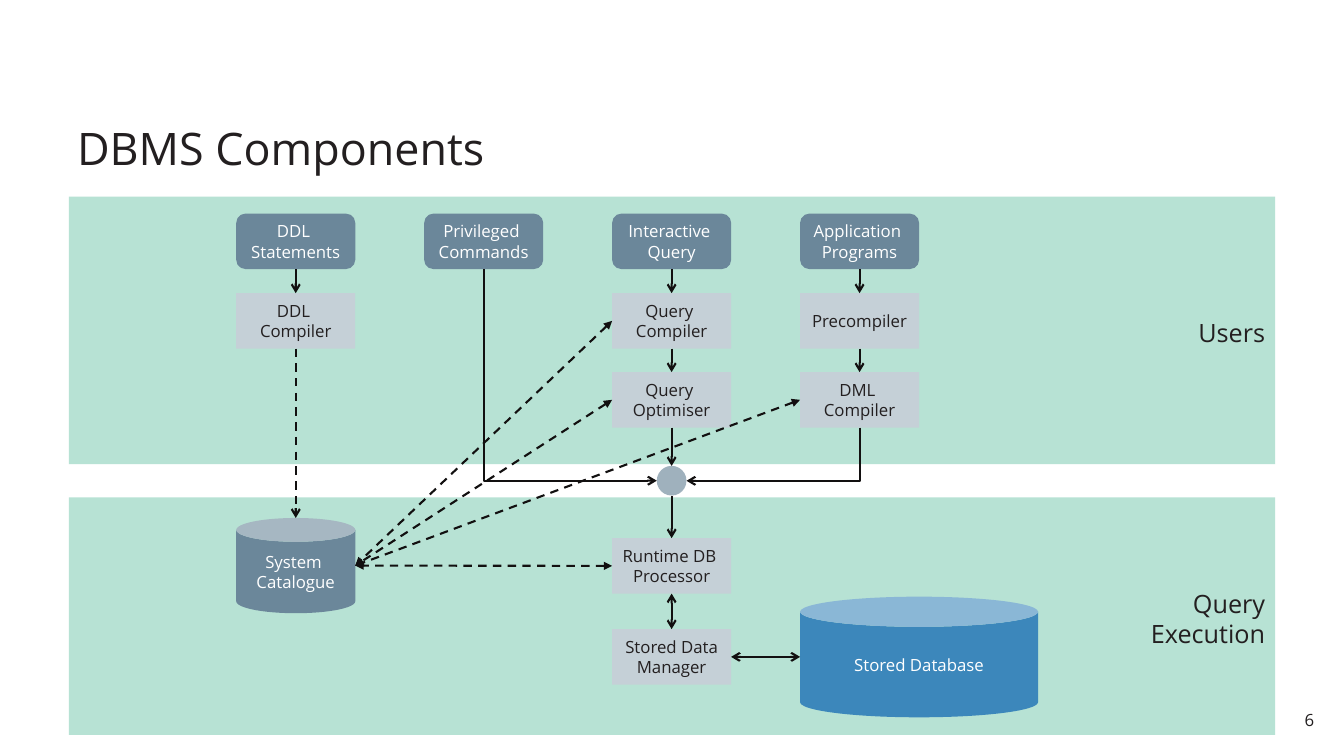
from lxml import etree
from pptx import Presentation
from pptx.dml.color import RGBColor
from pptx.enum.dml import MSO_LINE
from pptx.enum.shapes import MSO_CONNECTOR, MSO_SHAPE
from pptx.enum.text import MSO_ANCHOR, PP_ALIGN
from pptx.oxml.ns import qn
from pptx.util import Pt

RECT, ROUND = MSO_SHAPE.RECTANGLE, MSO_SHAPE.ROUNDED_RECTANGLE
CAN, OVAL = MSO_SHAPE.CAN, MSO_SHAPE.OVAL
STRAIGHT, ELBOW = MSO_CONNECTOR.STRAIGHT, MSO_CONNECTOR.ELBOW
MIDDLE, BOTTOM = MSO_ANCHOR.MIDDLE, MSO_ANCHOR.BOTTOM
LEFT, CENTER, RIGHT = PP_ALIGN.LEFT, PP_ALIGN.CENTER, PP_ALIGN.RIGHT
DASH = MSO_LINE.DASH

WHITE = RGBColor(0xFF, 0xFF, 0xFF)
INK = RGBColor(0x23, 0x1F, 0x20)
BLACK = RGBColor(0x12, 0x10, 0x10)
MINT = RGBColor(0xB7, 0xE2, 0xD4)
SLATE = RGBColor(0x6B, 0x87, 0x9A)
PALE = RGBColor(0xC5, 0xD0, 0xD7)
GREY = RGBColor(0x9F, 0xB1, 0xBD)
BLUE = RGBColor(0x3C, 0x87, 0xBB)

FONT = "Open Sans"
BOX_W, BOX_H = 85, 39.6
COLS = [168.75 + 134.25 * i for i in range(4)]
INPUT_Y, FIRST_Y, NEXT_Y, RUN_Y, STORE_Y = 152.6, 209.4, 265.8, 384.4, 449.4


def write(frame, text, size, color, align, insets):
    """Fill a text frame; insets are (side, top, bottom)."""
    side, top, bottom = insets
    frame.margin_left = frame.margin_right = Pt(side)
    frame.margin_top, frame.margin_bottom = Pt(top), Pt(bottom)
    frame.text = text
    for para in frame.paragraphs:
        para.alignment = align
        para.font.name = FONT
        para.font.size = Pt(size)
        para.font.color.rgb = color


def add_label(slide, text, area, size, align, insets):
    label = slide.shapes.add_textbox(*map(Pt, area))
    write(label.text_frame, text, size, INK, align, insets)
    label.text_frame.word_wrap = True
    return label.text_frame


def add_node(slide, kind, area, fill, text="", color=INK, size=12,
             align=CENTER, insets=(7.2, 0, 0)):
    node = slide.shapes.add_shape(kind, *map(Pt, area))
    node.shadow.inherit = False
    node.fill.solid()
    node.fill.fore_color.rgb = fill
    node.line.fill.background()
    if text:
        write(node.text_frame, text, size, color, align, insets)
        node.text_frame.word_wrap = False
        node.text_frame.vertical_anchor = MIDDLE
    return node


def add_box(slide, col, top, text):
    return add_node(slide, RECT, (COLS[col], top, BOX_W, BOX_H), PALE, text)


def side(node, name):
    """Middle of one side of a node, in EMU."""
    mid_x, mid_y = node.left + node.width // 2, node.top + node.height // 2
    return {"top": (mid_x, node.top),
            "bottom": (mid_x, node.top + node.height),
            "left": (node.left, mid_y),
            "right": (node.left + node.width, mid_y)}[name]


def style(link, head=None, tail="arrow", dash=None):
    link.line.color.rgb = BLACK
    link.line.width = Pt(1.5)
    if dash:
        link.line.dash_style = dash
    line = link.line._get_or_add_ln()
    for tag, kind in (("a:headEnd", head), ("a:tailEnd", tail)):
        if kind:
            etree.SubElement(line, qn(tag), type=kind)
    etree.SubElement(link._element.spPr, qn("a:effectLst"))


def join(slide, start, end, **look):
    link = slide.shapes.add_connector(STRAIGHT, *start, *end)
    style(link, **look)


def drop(slide, upper, lower, **look):
    join(slide, side(upper, "bottom"), side(lower, "top"), **look)


def bend(slide, start, end):
    """Arrow that runs down from start, then sideways to end."""
    (x1, y1), (x2, y2) = start, end
    span, fall = abs(x2 - x1), y2 - y1
    left, top = (x1 + x2 - fall) // 2, (y1 + y2 - span) // 2
    link = slide.shapes.add_connector(
        ELBOW, left, top, left + fall, top + span)
    props = link._element.spPr
    props.find(qn("a:prstGeom")).set("prst", "bentConnector2")
    frame = props.find(qn("a:xfrm"))
    frame.set("rot", str((90 if x2 < x1 else 270) * 60000))
    if x2 > x1:
        frame.set("flipH", "1")
    style(link)


def main():
    deck = Presentation()
    deck.slide_width, deck.slide_height = Pt(960), Pt(540)
    slide = deck.slides.add_slide(deck.slide_layouts[6])

    # Title and page number
    title = add_label(slide, "DBMS Components", (49.2, 54.8, 861.6, 73.4),
                      32, LEFT, (5.8, 2.9, 2.9))
    title.vertical_anchor = BOTTOM
    title.paragraphs[0].line_spacing = 0.9
    add_label(slide, "6", (910.8, 502.6, 33.8, 22.3), 12, RIGHT, (5.8, 4, 4))

    # Bands
    for top, height, text in ((140.5, 191, "Users"),
                              (355.3, 169.7, "Query\nExecution")):
        add_node(slide, RECT, (49.2, top, 861.6, height), MINT, text,
                 size=18, align=RIGHT, insets=(7.2, 3.6, 0))

    # User inputs
    inputs = ["DDL \nStatements", "Privileged \nCommands",
              "Interactive \nQuery", "Application \nPrograms"]
    ddl, command, query, program = [
        add_node(slide, ROUND, (x, INPUT_Y, BOX_W, BOX_H), SLATE, text, WHITE)
        for x, text in zip(COLS, inputs)]

    # Processing steps
    ddl_comp = add_box(slide, 0, FIRST_Y, "DDL \nCompiler")
    compiler = add_box(slide, 2, FIRST_Y, "Query \nCompiler")
    precomp = add_box(slide, 3, FIRST_Y, "Precompiler")
    optimiser = add_box(slide, 2, NEXT_Y, "Query \nOptimiser")
    dml_comp = add_box(slide, 3, NEXT_Y, "DML \nCompiler")
    runtime = add_box(slide, 2, RUN_Y, "Runtime DB \nProcessor")
    manager = add_box(slide, 2, STORE_Y, "Stored Data\nManager")
    hub = add_node(slide, OVAL, (COLS[2] + BOX_W / 2 - 10.6, 332.8, 21.2, 21.2),
                   GREY)

    # Stores
    catalogue = add_node(slide, CAN, (COLS[0], 370, BOX_W, 68), SLATE,
                         "System \nCatalogue", WHITE)
    store = add_node(slide, CAN, (COLS[3], 426.2, 170, 86.2), BLUE,
                     "Stored Database", WHITE)

    # Solid flow
    for upper, lower in ((ddl, ddl_comp), (query, compiler),
                         (compiler, optimiser), (program, precomp),
                         (precomp, dml_comp), (optimiser, hub),
                         (hub, runtime)):
        drop(slide, upper, lower)
    drop(slide, runtime, manager, head="arrow")
    start = side(manager, "right")
    join(slide, start, (store.left, start[1]), head="arrow")
    bend(slide, side(dml_comp, "bottom"), side(hub, "right"))
    bend(slide, side(command, "bottom"), side(hub, "left"))

    # Dashed catalogue access
    drop(slide, ddl_comp, catalogue, dash=DASH)
    for user in (optimiser, compiler, runtime, dml_comp):
        join(slide, side(user, "left"), side(catalogue, "right"),
             head="triangle", tail="triangle", dash=DASH)

    deck.save("out.pptx")


if __name__ == "__main__":
    main()
